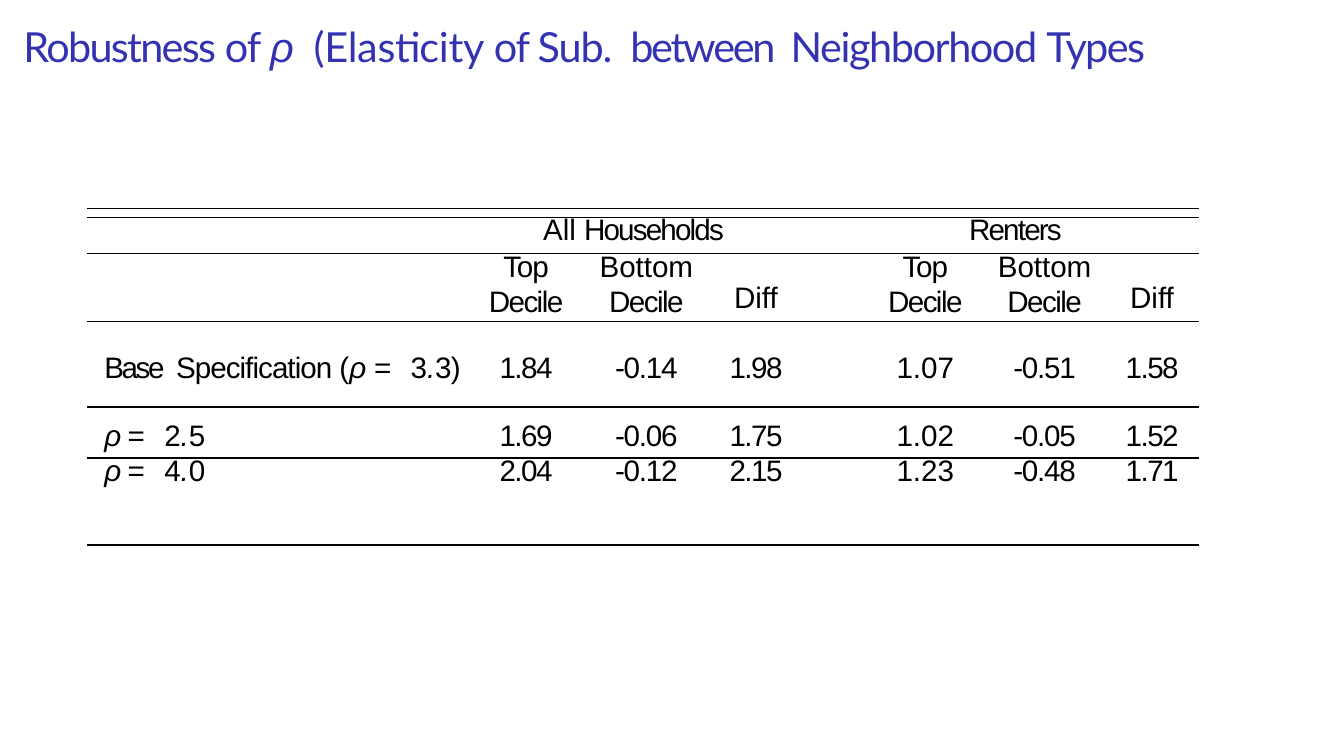
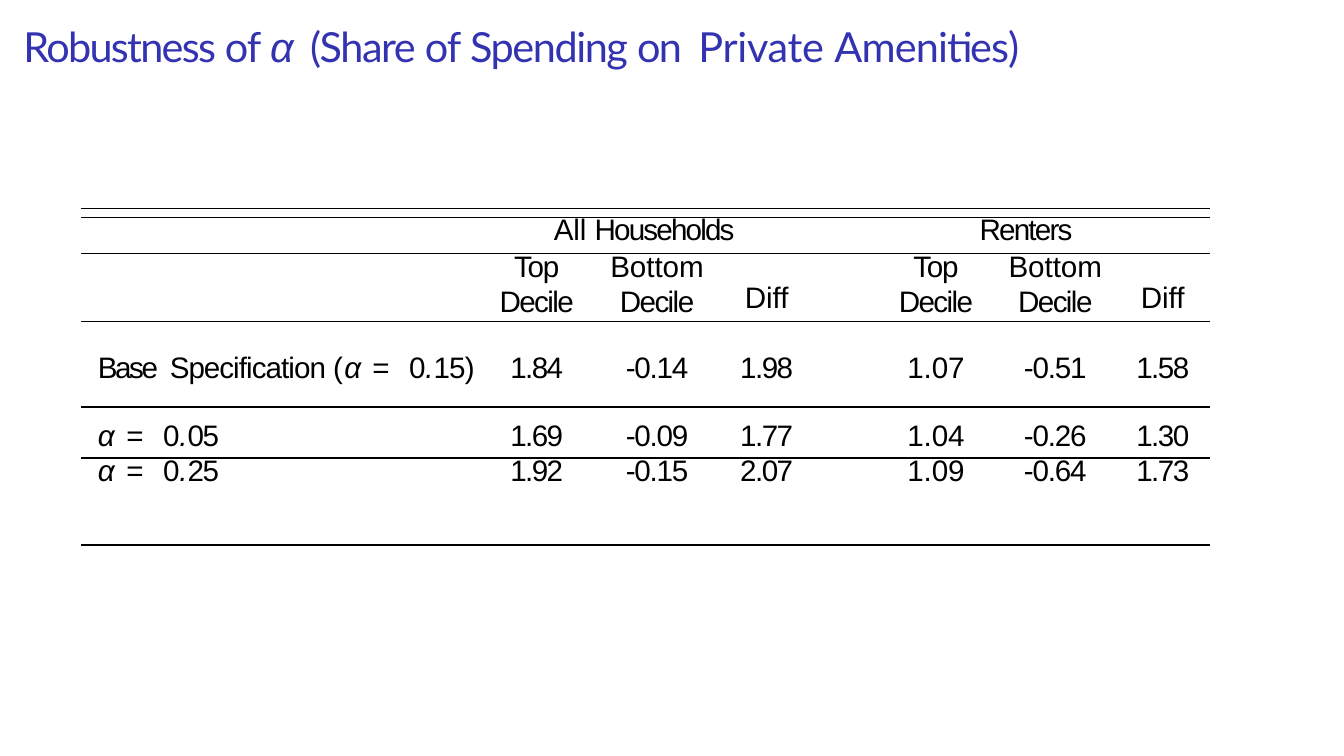
from pptx import Presentation
from pptx.dml.color import RGBColor
from pptx.enum.shapes import MSO_CONNECTOR
from pptx.enum.text import MSO_ANCHOR as Anchor, MSO_AUTO_SIZE as AutoSize, PP_ALIGN as Align
from pptx.oxml import parse_xml
from pptx.oxml.ns import nsdecls, qn
from pptx.util import Inches, Pt

COLORS = {"title": "3333B2", "ink": "000000"}
TITLE_FONT, BODY_FONT = "Lato", "Arial"
SLIDE_W, SLIDE_H = 6.31, 3.55
NO_STYLE = "{2D5ABB26-0587-4C30-8999-92F81FD0307C}"

# Grid of the results table, in inches
VALUE_COLS = [0.52, 0.61, 0.58, 0.68, 0.61, 0.41]
ROWS = [0.32, 0.40, 0.24, 0.15]
SIDE_MARGINS = [(0, 0.02), (0, 0.02), (0, 0.18), (0.15, 0), (0, 0.02), (0, 0.03)]
LABEL_INDENT = 0.08
TOP_RULES, TABLE_TOP, BOTTOM_RULE = (0.98, 1.02), 1.19, 2.56

# Rules above and below each table row, in points
ROW_RULES = [{"lnT": 0.5, "lnB": 0.5}, {"lnT": 0.5, "lnB": 0.75}, {"lnT": 0.75}, {}]
# Anchor, top margin, bottom margin and line spacing of each table row
ROW_TEXT = [
    (Anchor.TOP, 0, 0, None),
    (Anchor.MIDDLE, 0.04, 0, None),
    (Anchor.TOP, 0.06, 0, None),
    (Anchor.TOP, 0, 0, 10),
]
# Group headings: text runs, offset from the first value column, width
GROUPS = [
    ([("All ", 0), ("Households", -0.6)], 0.32, 0.88),
    ([("Renters", -0.6)], 2.32, 0.46),
]
SUBHEADS = ["Top", "Bottom", "Diff"] * 2
BASE_VALUES = ["1.84", "-0.14", "1.98", "1.07", "-0.51", "1.58"]


def write(paragraph, runs, size=10, font=BODY_FONT, color="ink", align=Align.LEFT):
    """Fill a paragraph with (text, letter spacing[, italic font]) runs."""
    paragraph.alignment = align
    paragraph.font.size = Pt(size)
    paragraph.font.name = font
    paragraph.font.color.rgb = RGBColor.from_string(COLORS[color])
    for text, spacing, *italic_font in runs:
        run = paragraph.add_run()
        run.text = text
        run._r.get_or_add_rPr().set("spc", str(round(spacing * 100)))
        if italic_font:
            run.font.italic = True
            run.font.name = italic_font[0]


def set_margins(frame, left=0, top=0, right=0, bottom=0):
    frame.margin_left, frame.margin_top = Inches(left), Inches(top)
    frame.margin_right, frame.margin_bottom = Inches(right), Inches(bottom)


def add_title(slide, runs):
    title = slide.shapes.title
    title.left, title.top = Inches(0.1), Inches(0.08)
    title.width, title.height = Inches(5.6), Inches(0.27)
    frame = title.text_frame
    frame.auto_size, frame.word_wrap = AutoSize.NONE, True
    frame.vertical_anchor = Anchor.TOP
    set_margins(frame, left=0.01, top=0.02)
    write(frame.paragraphs[0], runs, 14, TITLE_FONT, "title")


def add_rule(slide, left, width, y, weight):
    rule = slide.shapes.add_connector(
        MSO_CONNECTOR.STRAIGHT, Inches(left), Inches(y), Inches(left + width), Inches(y))
    rule.line.color.rgb = RGBColor.from_string(COLORS["ink"])
    rule.line.width = Pt(weight)
    rule.element.spPr.append(parse_xml(f"<a:effectLst {nsdecls('a')}/>"))


def add_group_heading(slide, runs, left, width):
    heading = slide.shapes.add_textbox(
        Inches(left), Inches(TOP_RULES[0]), Inches(width), Inches(0.19))
    frame = heading.text_frame
    frame.word_wrap = False
    set_margins(frame, left=0.01, top=0.01)
    write(frame.paragraphs[0], runs)


def style_cell(cell, row, col):
    """Set the borders, fill, anchor and margins of one cell."""
    props = cell._tc.get_or_add_tcPr()
    for side, weight in ROW_RULES[row].items():
        props.append(parse_xml(
            f'<a:{side} {nsdecls("a")} w="{Pt(weight)}"><a:solidFill>'
            f'<a:srgbClr val="{COLORS["ink"]}"/></a:solidFill></a:{side}>'))
    cell.fill.background()
    anchor, top, bottom, _ = ROW_TEXT[row]
    cell.vertical_anchor = anchor
    left, right = SIDE_MARGINS[col - 1] if col else (LABEL_INDENT, 0)
    set_margins(cell, left, top, right, bottom)


def write_subhead(cell, word):
    first = cell.text_frame.paragraphs[0]
    write(first, [(word, -0.4 if word == "Top" else 0)], align=Align.CENTER)
    if word == "Diff":
        cell.vertical_anchor = Anchor.BOTTOM
        cell.margin_bottom = Inches(0.03)
        return
    first.line_spacing = Pt(10.3)
    second = cell.text_frame.add_paragraph()
    write(second, [("Decile", -0.5)], align=Align.CENTER)
    second.line_spacing = Pt(12)


def value_spacing(value, col):
    if col == 4:
        return 0
    return -0.4 if value.startswith("-") else -0.5


def equation(symbol, number, symbol_spacing, digit_spacing=-0.5, end=""):
    whole, decimals = number.split(".")
    return [(symbol + " ", symbol_spacing, BODY_FONT), ("= ", 1.9),
            (whole, digit_spacing), (".", digit_spacing, BODY_FONT),
            (decimals + end, digit_spacing)]


def add_results(slide, left, label_width, rows):
    """Draw the results table with its rules and group headings."""
    widths = [label_width, *VALUE_COLS]
    total = sum(widths)
    for y in TOP_RULES:
        add_rule(slide, left, total, y, 0.4)
    for runs, offset, width in GROUPS:
        add_group_heading(slide, runs, left + label_width + offset, width)

    frame = slide.shapes.add_table(
        len(ROWS), len(widths), Inches(left), Inches(TABLE_TOP),
        Inches(total), Inches(sum(ROWS)))
    frame.element.find(".//" + qn("a:tableStyleId")).text = NO_STYLE
    table = frame.table
    table.first_row = table.horz_banding = False
    for column, width in zip(table.columns, widths):
        column.width = Inches(width)
    for row, height in zip(table.rows, ROWS):
        row.height = Inches(height)

    # Header row
    for col in range(len(widths)):
        cell = table.cell(0, col)
        style_cell(cell, 0, col)
        if col:
            write_subhead(cell, SUBHEADS[col - 1])
        else:
            write(cell.text_frame.paragraphs[0], [])

    # Value rows
    for row, (label, values) in enumerate(rows, 1):
        for col, content in enumerate([label, *values]):
            cell = table.cell(row, col)
            style_cell(cell, row, col)
            paragraph = cell.text_frame.paragraphs[0]
            if col:
                write(paragraph, [(content, value_spacing(content, col))], align=Align.CENTER)
            else:
                write(paragraph, content)
            if ROW_TEXT[row][3]:
                paragraph.line_spacing = Pt(ROW_TEXT[row][3])

    add_rule(slide, left, total, BOTTOM_RULE, 0.8)


def add_robustness_slide(prs, study):
    slide = prs.slides.add_slide(prs.slide_layouts[5])
    symbol, spacing = study["symbol"], study["symbol_spacing"]
    add_title(slide, [("Robustness ", -0.6), ("of ", -0.4), *study["title"]])
    base_label = [
        ("Base", -0.8), (" ", 1.2), ("Specification ", -0.3), ("(", study["base_spacing"]),
        *equation(symbol, study["base"], study["base_spacing"], -0.25, ")")]
    rows = [(base_label, BASE_VALUES)]
    rows += [(equation(symbol, number, spacing), values)
             for number, values in study["variants"].items()]
    add_results(slide, study["left"], study["label_width"], rows)


STUDIES = [
    {
        "title": [("ρ", -0.8, BODY_FONT), (" ", 3), ("(Elasticity ", -0.1), ("of Sub.", -0.4),
                  (" ", 2.4), ("between", -0.8), (" ", 1.5), ("Neighborhood ", -0.5),
                  ("Types", -0.6)],
        "symbol": "ρ", "symbol_spacing": -0.6, "base": "3.3", "base_spacing": -0.1,
        "left": 0.41, "label_width": 1.81,
        "variants": {
            "2.5": ["1.69", "-0.06", "1.75", "1.02", "-0.05", "1.52"],
            "4.0": ["2.04", "-0.12", "2.15", "1.23", "-0.48", "1.71"],
        },
    },
    {
        "title": [("α ", 0.8, BODY_FONT), ("(Share ", -0.5), ("of ", -0.4),
                  ("Spending ", -0.5), ("on", -0.6), (" ", 1.9), ("Private ", -0.1),
                  ("Amenities)", -0.3)],
        "symbol": "α", "symbol_spacing": 0.6, "base": "0.15", "base_spacing": 0.5,
        "left": 0.38, "label_width": 1.89,
        "variants": {
            "0.05": ["1.69", "-0.09", "1.77", "1.04", "-0.26", "1.30"],
            "0.25": ["1.92", "-0.15", "2.07", "1.09", "-0.64", "1.73"],
        },
    },
]


def main():
    prs = Presentation()
    prs.slide_width, prs.slide_height = Inches(SLIDE_W), Inches(SLIDE_H)
    for study in STUDIES:
        add_robustness_slide(prs, study)
    prs.save("out.pptx")


if __name__ == "__main__":
    main()
